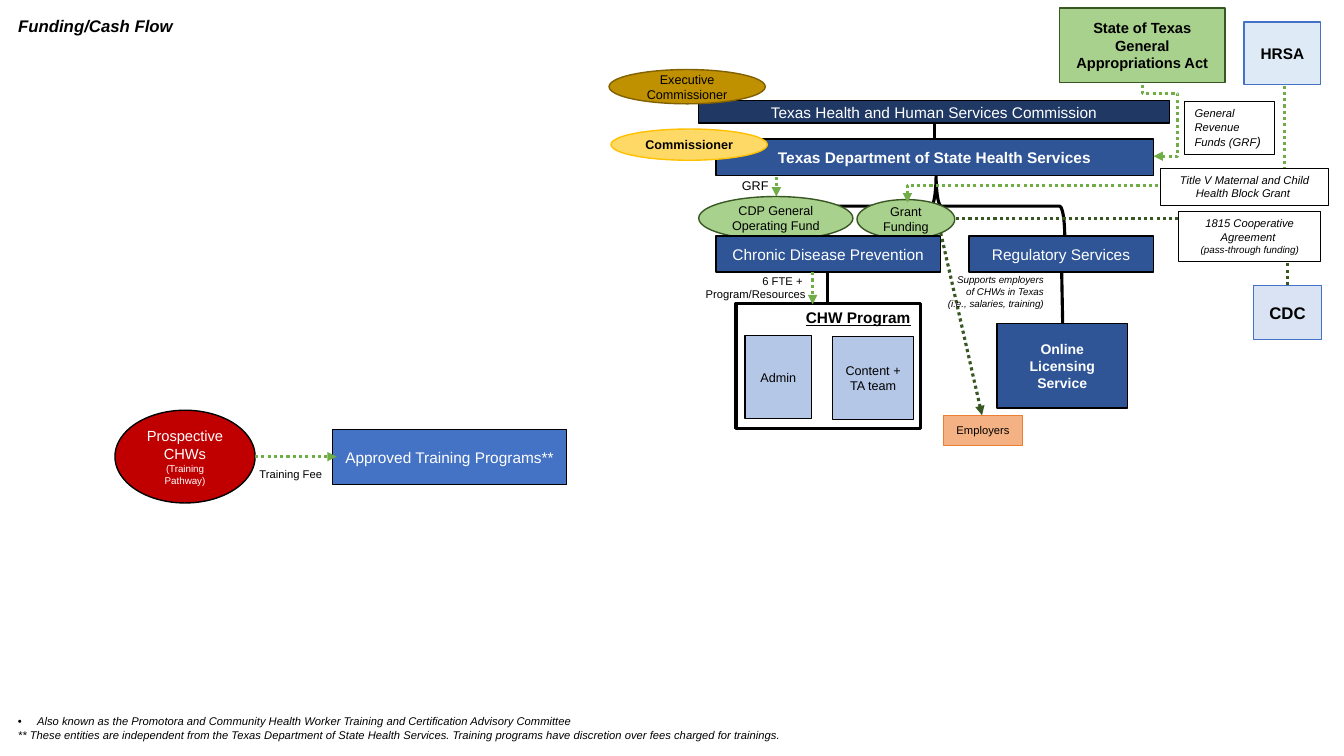
from lxml import etree
from pptx import Presentation
from pptx.dml.color import RGBColor
from pptx.enum.dml import MSO_LINE
from pptx.enum.shapes import MSO_CONNECTOR, MSO_SHAPE
from pptx.enum.text import MSO_ANCHOR, PP_ALIGN
from pptx.oxml.ns import qn
from pptx.util import Inches, Pt

RECT, OVAL, BRACE = MSO_SHAPE.RECTANGLE, MSO_SHAPE.OVAL, MSO_SHAPE.LEFT_BRACE
STRAIGHT, ELBOW = MSO_CONNECTOR.STRAIGHT, MSO_CONNECTOR.ELBOW
DOTTED = MSO_LINE.ROUND_DOT
TOP, MIDDLE = MSO_ANCHOR.TOP, MSO_ANCHOR.MIDDLE
LEFT, CENTER, RIGHT = PP_ALIGN.LEFT, PP_ALIGN.CENTER, PP_ALIGN.RIGHT

BLACK, WHITE = "000000", "FFFFFF"
NAVY, BLUE, MID_BLUE, PALE_BLUE = "203864", "2F5597", "4472C4", "B4C7E7"
FLOW_GREEN, DARK_GREEN, LIGHT_GREEN = "70AD47", "385723", "A9D18E"


def rgb(value):
    return RGBColor.from_string(value)


def style_run(run, size, color=BLACK, bold=False, italic=False):
    run.font.name = "Arial"
    run.font.size = Pt(size)
    run.font.bold = bold
    run.font.italic = italic
    run.font.color.rgb = rgb(color)


def write(shape, text, sizes, color=BLACK, align=CENTER, anchor=MIDDLE, bold=False, italic=False):
    """Fill a shape with text; sizes is one size or one per paragraph."""
    frame = shape.text_frame
    frame.text = text
    frame.word_wrap = True
    frame.vertical_anchor = anchor
    if not isinstance(sizes, tuple):
        sizes = (sizes,) * len(frame.paragraphs)
    for paragraph, size in zip(frame.paragraphs, sizes):
        paragraph.alignment = align
        for run in paragraph.runs:
            style_run(run, size, color, bold, italic)


def add_outline(slide, kind, at, fill, line, weight=1):
    shape = slide.shapes.add_shape(kind, *map(Inches, at))
    shape.shadow.inherit = False
    if fill:
        shape.fill.solid()
        shape.fill.fore_color.rgb = rgb(fill)
    else:
        shape.fill.background()
    shape.line.color.rgb = rgb(line)
    shape.line.width = Pt(weight)
    return shape


def add_box(slide, kind, at, fill, line, text, sizes, color=BLACK, bold=False):
    write(add_outline(slide, kind, at, fill, line), text, sizes, color, bold=bold)


def add_grant_note(slide, at, text, sizes, align=CENTER):
    note = add_outline(slide, RECT, at, WHITE, BLACK, 0.75)
    write(note, text, sizes, align=align, anchor=TOP, italic=True)
    return note


def add_caption(slide, at, text, sizes, align=CENTER, italic=False):
    caption = slide.shapes.add_textbox(*map(Inches, at))
    write(caption, text, sizes, align=align, anchor=TOP, italic=italic)
    return caption


def add_link(slide, start, end, color=BLACK, dotted=False, arrow=False, kind=STRAIGHT):
    link = slide.shapes.add_connector(kind, *map(Inches, start + end))
    link.line.color.rgb = rgb(color)
    link.line.width = Pt(2.25)
    if dotted:
        link.line.dash_style = DOTTED
    if arrow:
        etree.SubElement(link.line._get_or_add_ln(), qn("a:tailEnd"), type="triangle")
    etree.SubElement(link._element.spPr, qn("a:effectLst"))
    return link


def add_elbow(slide, start, end, turn, bends, color, arrow=True):
    """Draw a bent flow from its unrotated ends, turned by degrees; bends are fractions."""
    link = add_link(slide, start, end, color, True, arrow, ELBOW)
    properties = link._element.spPr
    properties.find(qn("a:xfrm")).set("rot", str(turn * 60000))
    geometry = properties.find(qn("a:prstGeom"))
    geometry.set("prst", f"bentConnector{len(bends) + 2}")
    guides = geometry.find(qn("a:avLst"))
    for number, bend in enumerate(bends, 1):
        name = f"adj{number}" if len(bends) > 1 else "adj1"
        etree.SubElement(guides, qn("a:gd"), name=name, fmla=f"val {round(bend * 100000)}")


def add_title(slide):
    title = slide.shapes.title
    title.left, title.top, title.width, title.height = map(Inches, (0.08, 0.11, 5.25, 0.3))
    write(title, "Funding/Cash Flow", 12, align=LEFT, anchor=TOP, bold=True, italic=True)


def add_structure(slide):
    brace = add_outline(slide, BRACE, (9.08, 0.87, 0.61, 2.35), None, BLACK, 2.25)
    brace.rotation = 90
    brace.adjustments[0], brace.adjustments[1] = 0.083, 0.543
    for start, end in (((8.21, 2.69), (8.21, 3.01)),
                       ((10.53, 2.7), (10.54, 3.21)),
                       ((9.27, 1.22), (9.27, 1.38))):
        add_link(slide, start, end)
    add_link(slide, (7.7, 1.69), (7.7, 1.95), FLOW_GREEN, True, True)


def add_entities(slide):
    entities = (
        (OVAL, (8.5, 1.98, 0.97, 0.39), LIGHT_GREEN, DARK_GREEN, "Grant Funding", 9),
        (OVAL, (6.93, 1.95, 1.53, 0.43), LIGHT_GREEN, DARK_GREEN, "CDP General Operating Fund", 9),
        (RECT, (7.1, 1.38, 4.34, 0.36), BLUE, BLACK,
         "Texas Department of State Health Services", 11, WHITE, True),
        (OVAL, (1.14, 4.07, 1.39, 0.92), "C00000", BLACK,
         "Prospective\nCHWs\n(Training Pathway)", (10.5, 10.5, 7), WHITE),
        (RECT, (7.1, 2.34, 2.23, 0.36), BLUE, BLACK, "Chronic Disease Prevention", 11, WHITE),
        (RECT, (3.3, 4.26, 2.32, 0.55), MID_BLUE, BLACK, "Approved Training Programs**", 11, WHITE),
        (RECT, (9.89, 3.21, 1.29, 0.84), BLUE, BLACK, "Online Licensing Service", 10, WHITE, True),
        (RECT, (9.61, 2.34, 1.83, 0.36), BLUE, BLACK, "Regulatory Services", 11, WHITE),
        (OVAL, (6.06, 1.28, 1.55, 0.31), "FFD966", "FFC000", "Commissioner", 9, BLACK, True),
        (RECT, (12.34, 0.22, 0.76, 0.62), "DEEBF7", MID_BLUE, "HRSA", 11, BLACK, True),
        (RECT, (6.93, 1, 4.67, 0.22), NAVY, BLACK,
         "Texas Health and Human Services Commission", 11, WHITE),
        (OVAL, (6.04, 0.69, 1.55, 0.34), "BF9000", "806000", "Executive Commissioner", 9),
        (RECT, (10.51, 0.08, 1.64, 0.74), LIGHT_GREEN, DARK_GREEN,
         "State of Texas\nGeneral Appropriations Act", 10.5, BLACK, True),
        (RECT, (12.43, 2.83, 0.68, 0.54), "DAE3F3", MID_BLUE, "CDC", 12, BLACK, True),
        (RECT, (9.36, 4.12, 0.78, 0.3), "F4B183", "ED7D31", "Employers", 8),
    )
    for entity in entities:
        add_box(slide, *entity)


def add_chw_program(slide):
    program = add_outline(slide, RECT, (7.3, 3.01, 1.83, 1.24), None, BLACK, 2.25)
    write(program, "CHW Program", 11, align=RIGHT, anchor=TOP, bold=True)
    program.text_frame.paragraphs[0].runs[0].font.underline = True
    add_box(slide, RECT, (7.39, 3.33, 0.66, 0.82), PALE_BLUE, BLACK, "Admin", 9)
    add_box(slide, RECT, (8.26, 3.34, 0.8, 0.82), PALE_BLUE, BLACK, "Content + TA team", 9)


def add_cash_flows(slide):
    for start, end, color in (((8.06, 2.7), (8.06, 3.02), FLOW_GREEN),
                              ((2.53, 4.53), (3.34, 4.53), FLOW_GREEN),
                              ((9.33, 2.31), (9.74, 4.12), DARK_GREEN)):
        add_link(slide, start, end, color, True, True)
    add_elbow(slide, (10.29, -0.44), (11.45, 3.3), 90, (0.852,), FLOW_GREEN)
    add_elbow(slide, (11.74, 1.14), (11.03, 1.25), 270, (0.121, 3.189), FLOW_GREEN)
    add_elbow(slide, (10.79, 4.15), (11.45, 0.85), 270, (), DARK_GREEN, arrow=False)


def add_labels(slide):
    revenue = add_grant_note(slide, (11.75, 1.01, 0.89, 0.52), "General Revenue Funds (GRF", 8, LEFT)
    closing = revenue.text_frame.paragraphs[0].add_run()
    closing.text = ")"
    style_run(closing, 9, italic=True)
    add_grant_note(slide, (11.51, 1.67, 1.67, 0.37),
                   "Title V Maternal and Child Health Block Grant ", 8)
    add_grant_note(slide, (11.69, 2.1, 1.41, 0.49),
                   "1815 Cooperative Agreement \n(pass-through funding)", (8, 7))
    add_caption(slide, (6.25, 2.67, 1.84, 0.37), "6 FTE + \nProgram/Resources", 8, RIGHT)
    add_caption(slide, (7.23, 1.72, 0.52, 0.25), "GRF", 9)
    add_caption(slide, (2.42, 4.59, 0.93, 0.24), "Training Fee", 8)
    add_caption(slide, (9.3, 2.67, 1.15, 0.57),
                "Supports employers of CHWs in Texas (i.e., salaries, training)", 7, RIGHT, True)


def add_footnotes(slide):
    footnotes = add_caption(
        slide, (0.08, 7.04, 8.01, 0.37),
        "Also known as the Promotora and Community Health Worker Training and Certification "
        "Advisory Committee\n** These entities are independent from the Texas Department of State "
        "Health Services. Training programs have discretion over fees charged for trainings.",
        8, LEFT, True)
    footnotes.fill.solid()
    footnotes.fill.fore_color.rgb = rgb(WHITE)
    bulleted = footnotes.text_frame.paragraphs[0]._p.get_or_add_pPr()
    bulleted.set("marL", str(Inches(0.19)))
    bulleted.set("indent", str(-Inches(0.19)))
    etree.SubElement(bulleted, qn("a:buFont"), typeface="Arial")
    etree.SubElement(bulleted, qn("a:buChar"), char="•")


def main():
    deck = Presentation()
    deck.slide_width, deck.slide_height = Inches(13.33), Inches(7.5)
    slide = deck.slides.add_slide(deck.slide_layouts[5])
    add_title(slide)
    add_structure(slide)
    add_entities(slide)
    add_chw_program(slide)
    add_cash_flows(slide)
    add_labels(slide)
    add_footnotes(slide)
    deck.save("out.pptx")


if __name__ == "__main__":
    main()
